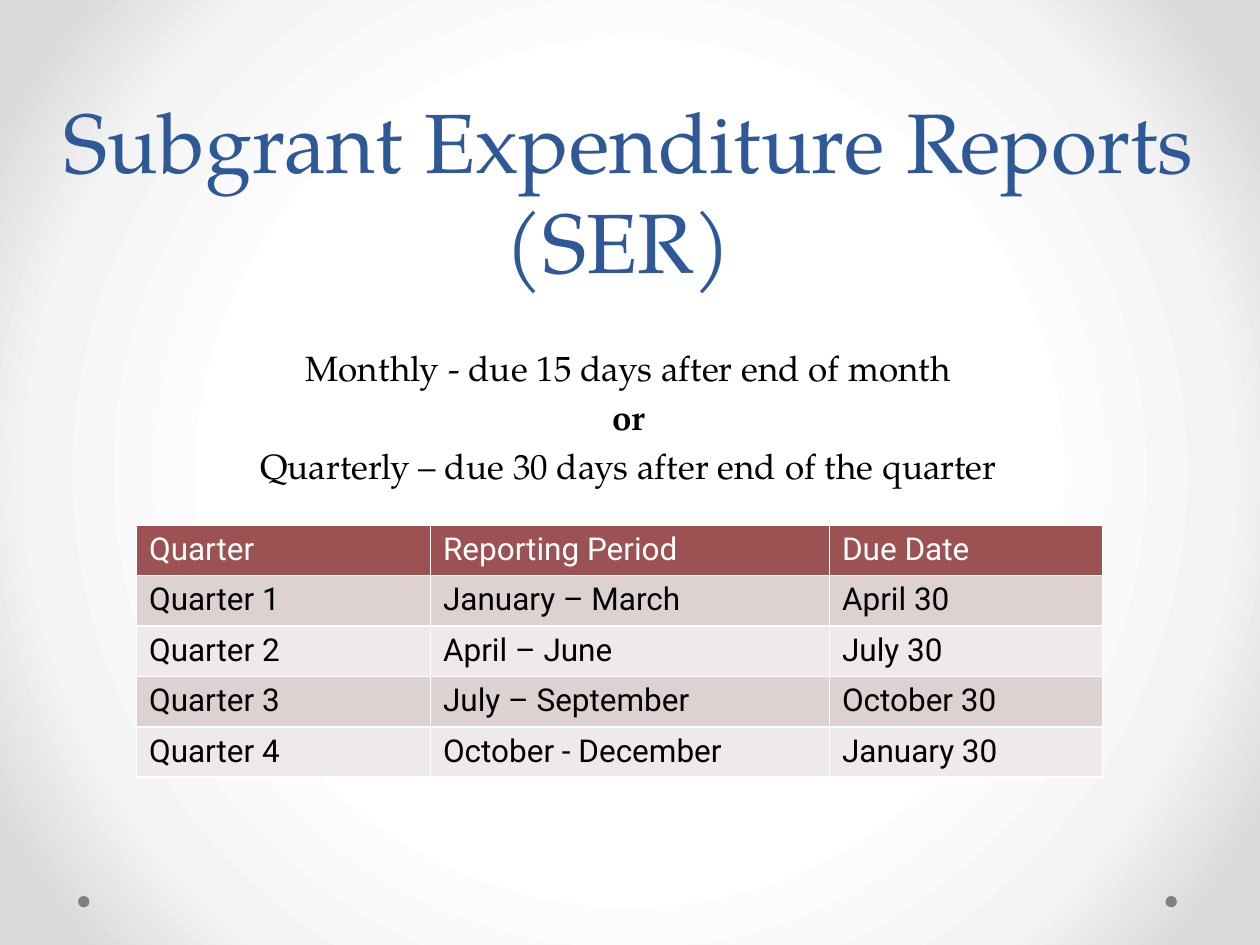
from dataclasses import dataclass

from lxml import etree
from pptx import Presentation
from pptx.dml.color import RGBColor
from pptx.enum.shapes import MSO_SHAPE
from pptx.enum.text import PP_ALIGN
from pptx.oxml import parse_xml
from pptx.oxml.ns import nsdecls, qn
from pptx.slide import Slide
from pptx.table import _Cell
from pptx.util import Pt

OVAL = MSO_SHAPE.OVAL
CENTER = PP_ALIGN.CENTER

WHITE = RGBColor(0xFF, 0xFF, 0xFF)
BLACK = RGBColor(0x00, 0x00, 0x00)
GRAY = RGBColor(0x80, 0x80, 0x80)
BLUE = RGBColor(0x2F, 0x58, 0x97)
RED = RGBColor(0x9C, 0x52, 0x52)
ROSE = RGBColor(0xDE, 0xD1, 0xD1)
PALE_ROSE = RGBColor(0xEF, 0xE9, 0xE9)
BACKDROP_STOPS = (
    (50, WHITE),
    (76, RGBColor(0xF4, 0xF4, 0xF4)),
    (92, RGBColor(0xDA, 0xDA, 0xDA)),
)

SERIF = "TeX Gyre Pagella"
SANS = "Roboto"


@dataclass
class Line:
    text: str
    size: float = 20
    color: RGBColor = BLACK
    bold: bool = False
    space_before: float = 4


LINES = (
    Line("Subgrant Expenditure Reports (SER) ", 48, BLUE, space_before=0),
    Line("Monthly - due 15 days after end of month", space_before=32),
    Line("or", bold=True),
    Line("Quarterly – due 30 days after end of the quarter"),
)

SCHEDULE = (
    ("Quarter", "Reporting Period", "Due Date"),
    ("Quarter 1", "January – March", "April 30"),
    ("Quarter 2", "April – June", "July 30"),
    ("Quarter 3", "July – September", "October 30"),
    ("Quarter 4", "October - December", "January 30"),
)
COLUMN_WIDTHS = (168, 228, 156)
ROW_HEIGHT = 26
DOT_LEFTS = (44.6, 666)


def paint_backdrop(page: Slide) -> None:
    fill = page.background.fill
    fill.gradient()
    gradient = page._element.find(".//" + qn("a:gradFill"))
    stops = "".join(
        f'<a:gs pos="{position * 1000}"><a:srgbClr val="{color}"/></a:gs>'
        for position, color in BACKDROP_STOPS
    )
    radial = parse_xml(
        f'<a:gradFill {nsdecls("a")} rotWithShape="1"><a:gsLst>{stops}</a:gsLst>'
        '<a:path path="circle"><a:fillToRect l="50000" t="50000" r="50000" b="50000"/>'
        "</a:path></a:gradFill>"
    )
    gradient.getparent().replace(gradient, radial)


def draw_dot(page: Slide, left: float) -> None:
    dot = page.shapes.add_shape(OVAL, Pt(left), Pt(512), Pt(6.5), Pt(6.5))
    dot.shadow.inherit = False
    dot.fill.solid()
    dot.fill.fore_color.rgb = GRAY
    dot.line.fill.background()


def draw_text(page: Slide, lines: tuple[Line, ...]) -> None:
    box = page.shapes.add_textbox(Pt(-0.7), Pt(36), Pt(720), Pt(246))
    frame = box.text_frame
    frame.word_wrap = True
    frame.margin_left = frame.margin_right = 0
    frame.margin_top = Pt(15)
    frame.margin_bottom = Pt(3.6)
    for index, line in enumerate(lines):
        para = frame.add_paragraph() if index else frame.paragraphs[0]
        para.text = line.text
        para.alignment = CENTER
        para.space_before = Pt(line.space_before)
        para.font.name = SERIF
        para.font.size = Pt(line.size)
        para.font.bold = line.bold
        para.font.color.rgb = line.color


def add_borders(cell: _Cell) -> None:
    properties = cell._tc.get_or_add_tcPr()
    for index, side in enumerate(("lnL", "lnR", "lnT", "lnB")):
        border = etree.Element(qn(f"a:{side}"), w=str(Pt(1)))
        fill = etree.SubElement(border, qn("a:solidFill"))
        etree.SubElement(fill, qn("a:srgbClr"), val=str(WHITE))
        properties.insert(index, border)


def draw_schedule(page: Slide) -> None:
    table = page.shapes.add_table(
        len(SCHEDULE), len(COLUMN_WIDTHS), Pt(78), Pt(300),
        Pt(sum(COLUMN_WIDTHS)), Pt(ROW_HEIGHT * len(SCHEDULE)),
    ).table
    for column, width in zip(table.columns, COLUMN_WIDTHS):
        column.width = Pt(width)
    for row_index, texts in enumerate(SCHEDULE):
        table.rows[row_index].height = Pt(ROW_HEIGHT)
        band = ROSE if row_index % 2 else PALE_ROSE
        for column_index, text in enumerate(texts):
            cell = table.cell(row_index, column_index)
            cell.fill.solid()
            cell.fill.fore_color.rgb = band if row_index else RED
            add_borders(cell)
            para = cell.text_frame.paragraphs[0]
            para.text = text
            para.font.name = SANS
            para.font.size = Pt(18)
            para.font.bold = False
            para.font.color.rgb = BLACK if row_index else WHITE


def main() -> None:
    deck = Presentation()
    deck.slide_width = Pt(720)
    deck.slide_height = Pt(540)
    page = deck.slides.add_slide(deck.slide_layouts[6])
    paint_backdrop(page)
    for left in DOT_LEFTS:
        draw_dot(page, left)
    draw_text(page, LINES)
    draw_schedule(page)
    deck.save("out.pptx")


if __name__ == "__main__":
    main()
